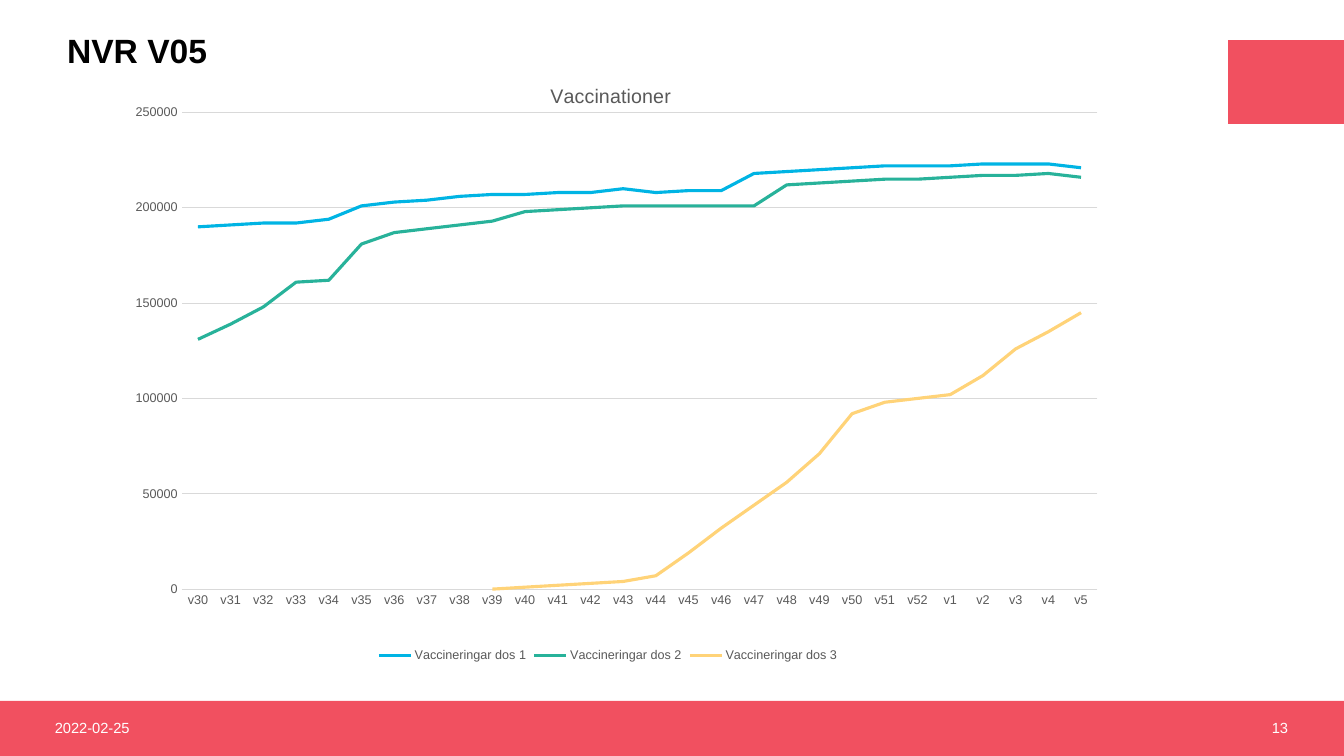
from lxml import etree
from pptx import Presentation
from pptx import util as u
from pptx.chart.data import CategoryChartData
from pptx.dml.color import RGBColor
from pptx.enum import chart as ch, shapes, text
from pptx.oxml.ns import qn

PX = 914400 / 100.8
CORAL, GREY, GRID = "F15060", "595959", "D9D9D9"


def px(*lengths):
    return [u.Emu(round(n * PX)) for n in lengths]


def style(font, size, color, bold=False):
    font.name, font.size, font.bold = "Arial", u.Pt(size), bold
    font.color.rgb = RGBColor.from_string(color)


prs = Presentation()
prs.slide_width, prs.slide_height = px(1344, 756)
s = prs.slides.add_slide(prs.slide_layouts[5])

# Coral bottom band and corner block
for box in ((0, 701, 1344, 55), (1228, 40, 116, 84)):
    sp = s.shapes.add_shape(shapes.MSO_SHAPE.RECTANGLE, *px(*box))
    sp.shadow.inherit = False
    sp.fill.solid()
    sp.fill.fore_color.rgb = RGBColor.from_string(CORAL)
    sp.line.fill.background()

# Date and slide number
for left, words, align in ((45, "2022-02-25", text.PP_ALIGN.LEFT),
                           (996, "13", text.PP_ALIGN.RIGHT)):
    tf = s.shapes.add_textbox(*px(left, 701, 302, 54)).text_frame
    tf.word_wrap = True
    tf.vertical_anchor = text.MSO_ANCHOR.MIDDLE
    p = tf.paragraphs[0]
    p.alignment = align
    r = p.add_run()
    r.text = words
    style(r.font, 10.5, "FFFFFF")

# Title
title = s.shapes.title
title.left, title.top, title.width, title.height = px(57, 25, 162, 50)
tf = title.text_frame
tf.word_wrap = False
tf.auto_size = text.MSO_AUTO_SIZE.NONE
tf.vertical_anchor = text.MSO_ANCHOR.MIDDLE
p = tf.paragraphs[0]
p.alignment = text.PP_ALIGN.LEFT
r = p.add_run()
r.text = "NVR V05"
style(r.font, 24, "000000", bold=True)

# Weekly doses, in thousands; dose 3 starts in week 39
weeks = [*range(30, 53), *range(1, 6)]
doses = [
    ("00B4E4", [190, 191, 192, 192, 194, 201, 203, 204, 206, 207, 207, 208, 208, 210,
                208, 209, 209, 218, 219, 220, 221, 222, 222, 222, 223, 223, 223, 221]),
    ("28B29A", [131, 139, 148, 161, 162, 181, 187, 189, 191, 193, 198, 199, 200, 201,
                201, 201, 201, 201, 212, 213, 214, 215, 215, 216, 217, 217, 218, 216]),
    ("FFD378", [None] * 9 + [0, 1, 2, 3, 4, 7, 19, 32, 44, 56, 71, 92, 98, 100,
                             102, 112, 126, 135, 145]),
]
data = CategoryChartData(number_format="General")
data.categories = [f"v{week}" for week in weeks]
for number, (color, thousands) in enumerate(doses, 1):
    data.add_series(f"Vaccineringar dos {number}",
                    [None if n is None else n * 1000 for n in thousands])
chart = s.shapes.add_chart(ch.XL_CHART_TYPE.LINE, *px(98, 55, 1020, 612), data).chart
style(chart.font, 10, "000000")

# Lines
for series, (color, thousands) in zip(chart.plots[0].series, doses):
    series.smooth = False
    series.marker.style = ch.XL_MARKER_STYLE.NONE
    series.format.line.width = u.Pt(2.25)
    series.format.line.color.rgb = RGBColor.from_string(color)

# Axes
weeks_axis, doses_axis = chart.category_axis, chart.value_axis
for axis in (weeks_axis, doses_axis):
    axis.major_tick_mark = axis.minor_tick_mark = ch.XL_TICK_MARK.NONE
    style(axis.tick_labels.font, 9, GREY)
doses_axis.minimum_scale, doses_axis.maximum_scale = 0, 250000
doses_axis.major_unit = 50000
doses_axis.has_major_gridlines = True
doses_axis.format.line.fill.background()
for line in (weeks_axis.format.line, doses_axis.major_gridlines.format.line):
    line.width = u.Pt(0.75)
    line.color.rgb = RGBColor.from_string(GRID)

# Legend and chart title
chart.has_legend = True
chart.legend.position = ch.XL_LEGEND_POSITION.BOTTOM
chart.legend.include_in_layout = False
style(chart.legend.font, 9, GREY)
chart.has_title = True
r = chart.chart_title.text_frame.paragraphs[0].add_run()
r.text = "Vaccinationer"
style(r.font, 14, GREY)

# Fixed places for the chart title and the plot area
plot_area = chart.plots[0]._element.getparent()
title_layout = {"xMode": "edge", "yMode": "edge", "x": 0.44, "y": 0.04}
plot_layout = {"layoutTarget": "inner", "xMode": "edge", "yMode": "edge",
               "x": 0.082, "y": 0.094, "w": 0.898, "h": 0.779}
for parent, index, settings in ((chart.chart_title._element, 1, title_layout),
                                (plot_area, 0, plot_layout)):
    for old in parent.findall(qn("c:layout")):
        parent.remove(old)
    layout = etree.Element(qn("c:layout"))
    manual = etree.SubElement(layout, qn("c:manualLayout"))
    for tag, value in settings.items():
        etree.SubElement(manual, qn(f"c:{tag}")).set("val", str(value))
    parent.insert(index, layout)

prs.save("out.pptx")
